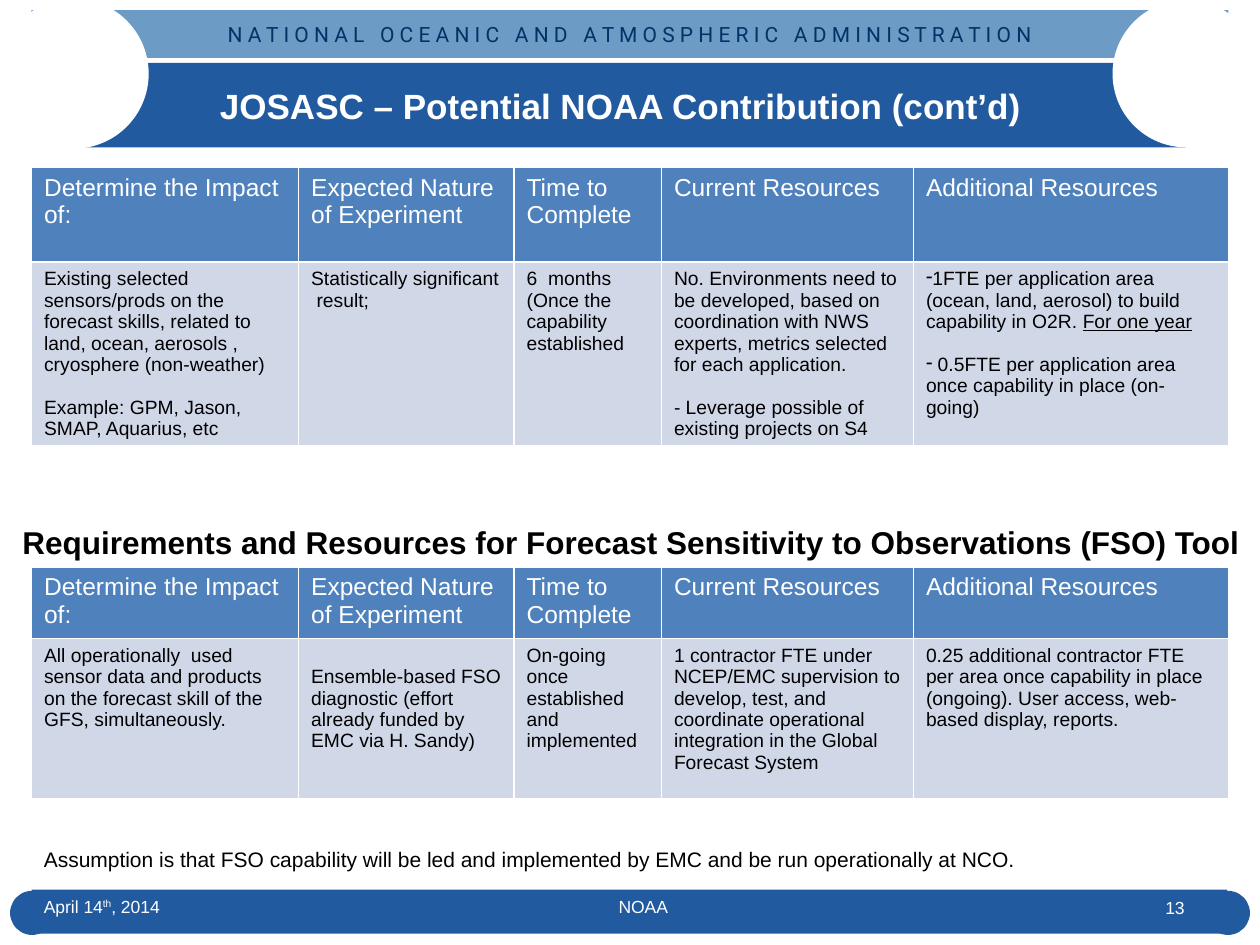
import pptx
import pptx.util
import pptx.dml.color
import pptx.enum.shapes
import pptx.enum.text
import pptx.oxml
import pptx.oxml.ns

Inches = pptx.util.Inches
Pt = pptx.util.Pt
SHAPE = pptx.enum.shapes.MSO_SHAPE
ALIGN = pptx.enum.text.PP_ALIGN
ANCHOR = pptx.enum.text.MSO_ANCHOR

COLORS = {
    "navy": "215A9F", "sky": "6C9BC6", "ink": "003366", "white": "FFFFFF",
    "black": "000000", "header": "4F81BD", "body": "D0D8E8",
}
COLUMNS = [2.12, 1.71, 1.17, 2, 2.5]
HEADERS = ["Determine the Impact of:", "Expected Nature of Experiment",
           "Time to Complete", "Current Resources", "Additional Resources"]
LINE = 0.17  # height of one line of body text

# Each cell is a list of paragraphs; a paragraph is a list of (text, format) runs
IMPACT_CELLS = [
    [[("Existing selected sensors/prods on the forecast skills, related to land, "
       "ocean, aerosols , cryosphere (non-weather)", {})],
     [("Example: GPM, Jason, SMAP, Aquarius, etc", {})]],
    [[("Statistically significant  result;", {})]],
    [[("6  months (Once the capability established", {})]],
    [[("No. Environments need to be developed, based on coordination with NWS "
       "experts, metrics selected for each application.", {})],
     [("- Leverage possible of existing projects on S4", {})]],
    [[("1FTE per application area (ocean, land, aerosol) to build capability in O2R. ", {}),
      ("For one year", {"underline": True})],
     [(" 0.5FTE per application area once capability in place (on-going)", {})]],
]
FSO_CELLS = [
    [[("All operationally  used sensor data and products on the forecast skill of "
       "the GFS, simultaneously.", {})]],
    [[("Ensemble-based FSO diagnostic (effort already funded by EMC via H. Sandy)", {})]],
    [[("On-going once established and implemented", {})]],
    [[("1 contractor FTE under NCEP/EMC supervision to develop, test, and coordinate "
       "operational integration in the Global Forecast System", {})]],
    [[("0.25 additional contractor FTE per area once capability in place (ongoing). "
       "User access, web-based display, reports.", {})]],
]


def rgb(name):
    return pptx.dml.color.RGBColor.from_string(COLORS[name])


def add_run(p, text, size, color, name="Arial", **formats):
    r = p.add_run()
    r.text = text
    values = {"size": Pt(size), "name": name, "bold": False, **formats}
    for key, value in values.items():
        setattr(r.font, key, value)
    r.font.color.rgb = rgb(color)
    return r


def add_block(s, shape, box, color):
    sp = s.shapes.add_shape(shape, *map(Inches, box))
    sp.shadow.inherit = False
    sp.fill.solid()
    sp.fill.fore_color.rgb = rgb(color)
    sp.line.fill.background()
    return sp


def add_text(s, box, text, size, color, align=ALIGN.LEFT, **formats):
    tf = s.shapes.add_textbox(*map(Inches, box)).text_frame
    tf.word_wrap = True
    p = tf.paragraphs[0]
    p.alignment = align
    add_run(p, text, size, color, **formats)
    return p


def add_dash(p):
    pPr = p._p.get_or_add_pPr()
    pPr.set("marL", "0")
    pPr.set("indent", "0")
    pPr.append(pptx.oxml.parse_xml(
        f'<a:buChar {pptx.oxml.ns.nsdecls("a")} char="-"/>'))


def add_borders(cell):
    tcPr = cell._tc.get_or_add_tcPr()
    for i, side in enumerate(("lnL", "lnR", "lnT", "lnB")):
        tcPr.insert(i, pptx.oxml.parse_xml(
            f'<a:{side} {pptx.oxml.ns.nsdecls("a")} w="{Pt(1)}"><a:solidFill>'
            f'<a:srgbClr val="{COLORS["white"]}"/></a:solidFill></a:{side}>'))


def fill_cell(cell, paragraphs, size, color, fill, dashed=False):
    cell.fill.solid()
    cell.fill.fore_color.rgb = rgb(fill)
    add_borders(cell)
    tf = cell.text_frame
    for i, runs in enumerate(paragraphs):
        p = tf.add_paragraph() if i else tf.paragraphs[0]
        if i:
            p.space_before = Inches(LINE)
        if dashed:
            add_dash(p)
        for text, formats in runs:
            add_run(p, text, size, color, **formats)


def add_resource_table(s, top, heights, body, dashed_column=None):
    frame = s.shapes.add_table(2, len(COLUMNS), Inches(0.25), Inches(top),
                               Inches(sum(COLUMNS)), Inches(sum(heights)))
    table = frame.table
    for row, height in zip(table.rows, heights):
        row.height = Inches(height)
    for i, width in enumerate(COLUMNS):
        table.columns[i].width = Inches(width)
        fill_cell(table.cell(0, i), [[(HEADERS[i], {})]], 14, "white", "header")
        fill_cell(table.cell(1, i), body[i], 11, "black", "body", i == dashed_column)
    return table


def add_banner(s):
    add_block(s, SHAPE.RECTANGLE, (0.25, 7.06, 9.49, 0.35), "navy")
    band = add_block(s, SHAPE.RECTANGLE, (0.25, 0.08, 9.5, 0.38), "sky")
    tf = band.text_frame
    tf.vertical_anchor = ANCHOR.MIDDLE
    tf.paragraphs[0].alignment = ALIGN.CENTER
    add_run(tf.paragraphs[0],
            "N A T I O N A L   O C E A N I C   A N D   A T M O S P H E R I C   "
            "A D M I N I S T R A T I O N", 12, "ink", "Roboto")
    add_block(s, SHAPE.RECTANGLE, (0.58, 0.5, 8.83, 0.67), "navy")
    # Round cut-outs at the top, round ends on the footer bar
    for left in (8.83, 0):
        cutout = add_block(s, SHAPE.OVAL, (left, 0, 1.17, 1.17), "white")
    cutout.line.color.rgb = rgb("white")
    cutout.line.width = Pt(1.5)
    for left in (0.08, 9.57):
        add_block(s, SHAPE.OVAL, (left, 7.07, 0.35, 0.35), "navy")


def add_footer(s):
    add_text(s, (2.65, 7.06, 4.91, 0.33), "NOAA", 10, "white", ALIGN.CENTER)
    p = add_text(s, (0.25, 7.06, 2.2, 0.33), "April 14", 10, "white")
    ordinal = add_run(p, "th", 10, "white")
    ordinal._r.get_or_add_rPr().set("baseline", "30000")
    add_run(p, ", 2014", 10, "white")
    add_text(s, (7.51, 7.07, 1.99, 0.33), "13", 10, "white", ALIGN.RIGHT)


def set_title(s, text):
    title = s.shapes.title
    title.left, title.top, title.width, title.height = map(
        Inches, (0.83, 0.25, 8.19, 1.17))
    title.element.getparent().append(title.element)  # in front of the banner
    tf = title.text_frame
    tf.vertical_anchor = ANCHOR.MIDDLE
    tf.paragraphs[0].alignment = ALIGN.CENTER
    add_run(tf.paragraphs[0], text, 20, "white", bold=True)


def main():
    prs = pptx.Presentation()
    prs.slide_width, prs.slide_height = Inches(10), Inches(7.5)
    s = prs.slides.add_slide(prs.slide_layouts[5])

    # Frame and title
    add_banner(s)
    add_footer(s)
    set_title(s, "JOSASC – Potential NOAA Contribution (cont’d)")

    # Sensor impact
    add_resource_table(s, 1.33, (0.75, 1.46), IMPACT_CELLS, dashed_column=4)

    # FSO tool
    add_text(s, (0.08, 4.1, 10, 0.4), "Requirements and Resources for Forecast "
             "Sensitivity to Observations (FSO) Tool", 18, "black", bold=True)
    table = add_resource_table(s, 4.5, (0.56, 1.27), FSO_CELLS)
    table.cell(1, 1).margin_top = Inches(0.05 + LINE)  # starts one line lower
    add_text(s, (0.25, 6.67, 9.17, 0.3), "Assumption is that FSO capability will be led "
             "and implemented by EMC and be run operationally at NCO.", 12, "black")

    prs.save("out.pptx")


if __name__ == "__main__":
    main()
